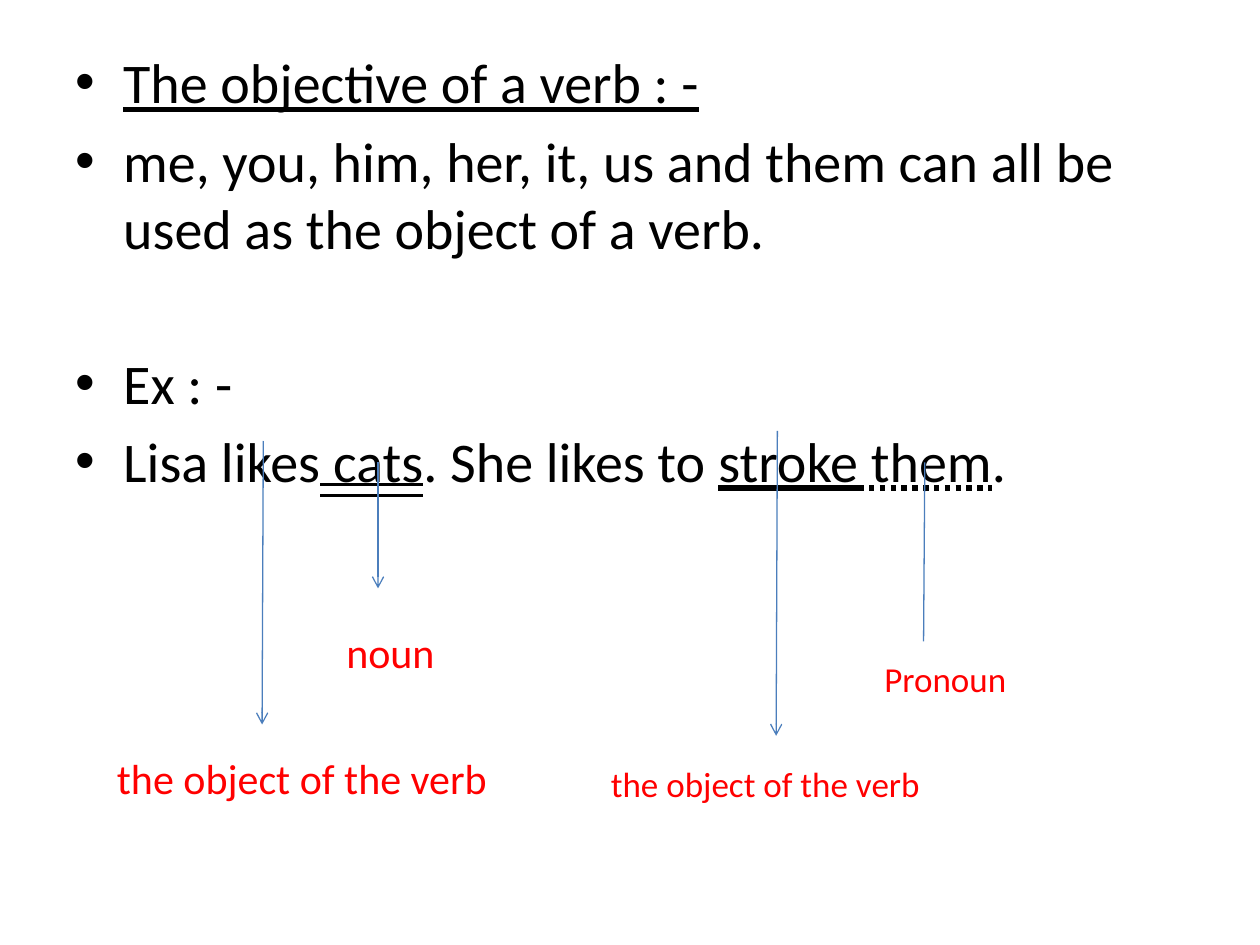
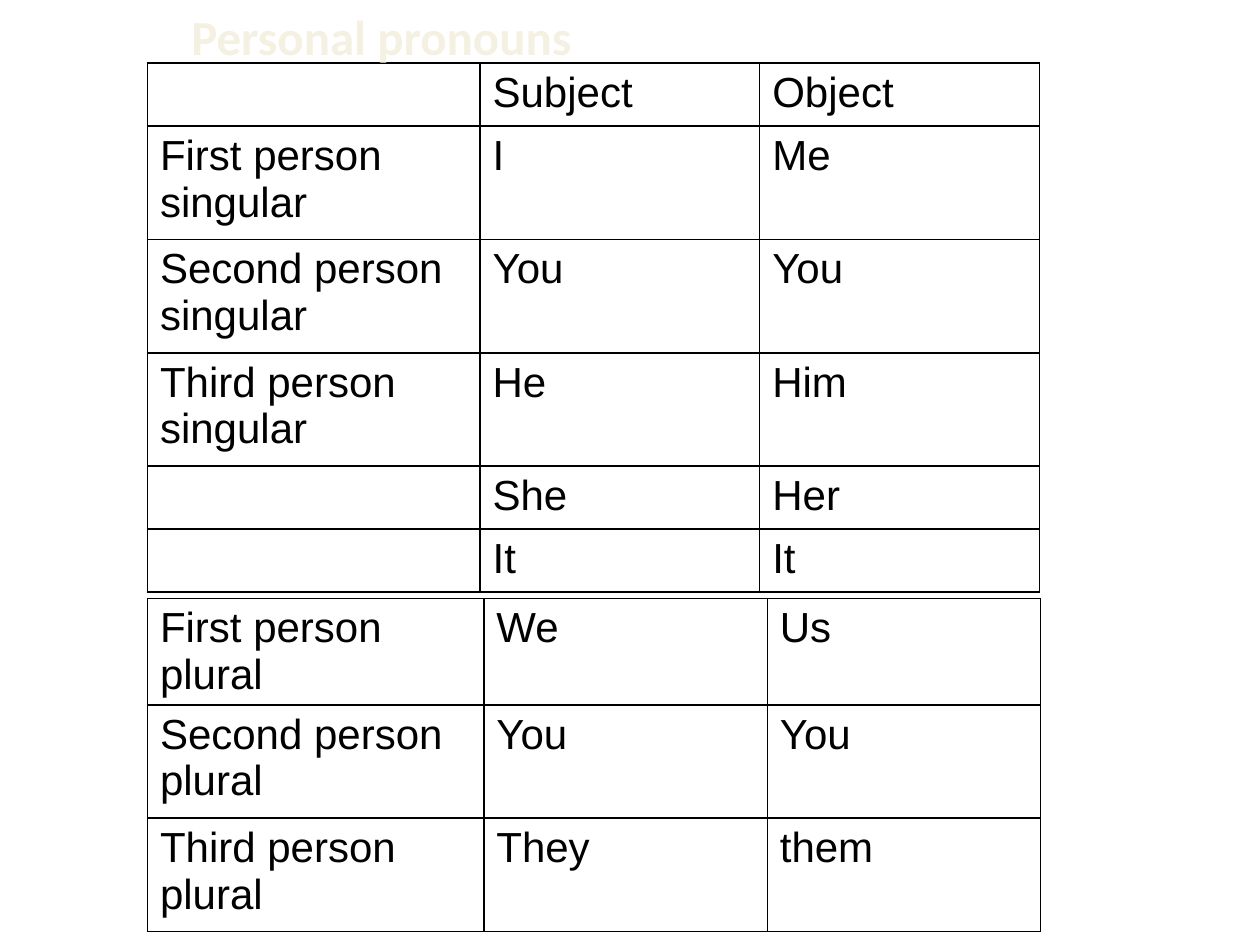
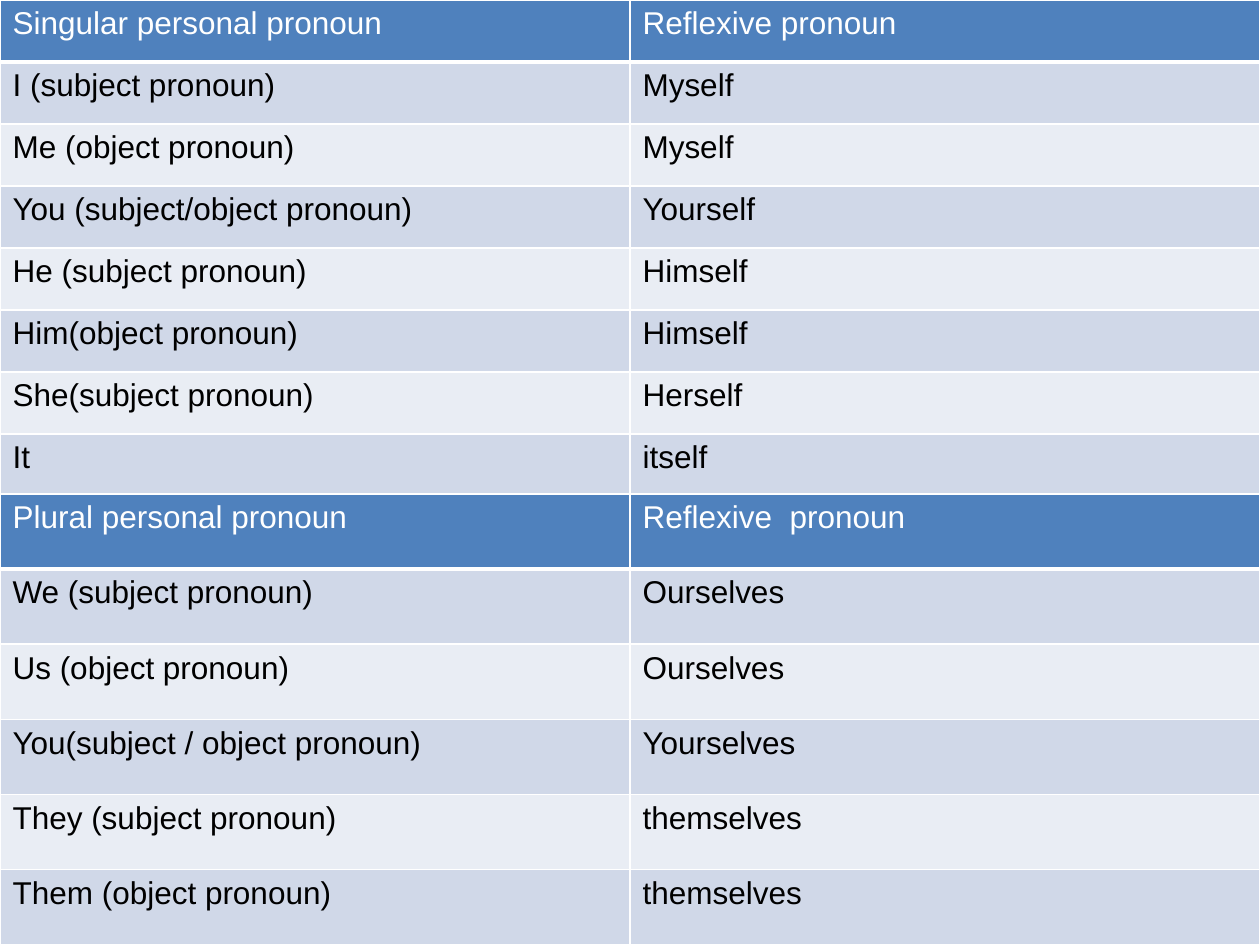
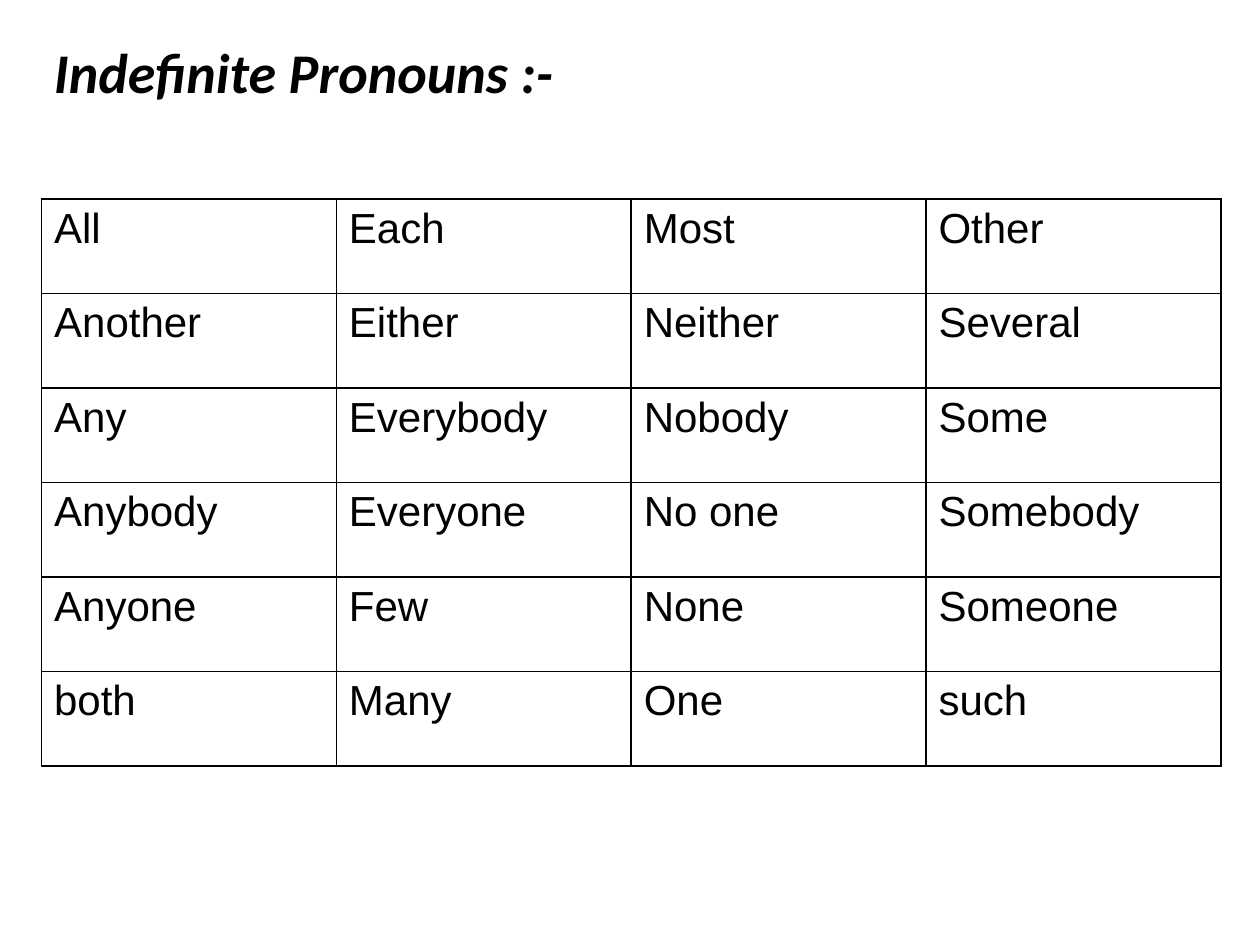
from dataclasses import dataclass

import pptx
import pptx.dml.color
import pptx.enum.shapes
import pptx.enum.text
import pptx.oxml
import pptx.oxml.ns
import pptx.util
from pptx.util import Inches, Pt


@dataclass(frozen=True)
class Theme:
    body_font: str = "Calibri"
    table_font: str = "Arial"
    black: str = "000000"
    white: str = "FFFFFF"
    label: str = "FF0000"
    arrow: str = "4B7EBC"
    title: str = "F4F1E3"
    title_outline: str = "054697"
    header: str = "4F81BD"
    bands: tuple = ("D0D8E8", "E9EDF4")
    body_size: int = 32
    title_size: int = 28
    grid_size: int = 24
    label_size: int = 20
    banded_size: int = 18
    arrow_width: float = 0.75
    border_width: int = 1
    header_border: int = 3


THEME = Theme()
UNDERLINE = pptx.enum.text.MSO_UNDERLINE

VERB_BOX = (0.5, 0.33, 9, 4.95)
VERB_BULLETS = [
    (0, [("The objective of a verb : -", UNDERLINE.SINGLE_LINE)]),
    (6.4, [("me, you, him, her, it, us and them can all be used as the object of a verb.", None)]),
    (50, [("Ex : -", None)]),
    (6.4, [
        ("Lisa likes", None),
        (" cats", UNDERLINE.DOUBLE_LINE),
        (". She likes to ", None),
        ("stroke", UNDERLINE.SINGLE_LINE),
        (" them", UNDERLINE.DOTTED_LINE),
        (".", None),
    ]),
]
NOUN = {"text": "noun", "indent": 2.15, "before": 76}
ARROWS = [
    ((3, 3.67), (3, 4.67), True),
    ((2.09, 3.5), (2.08, 5.75), True),
    ((7.34, 3.67), (7.33, 5.09), False),
    ((6.17, 3.42), (6.16, 5.84), True),
]
LABELS = [
    ("the object of the verb", (0.83, 5.92, 3.24, 0.51), THEME.grid_size, False),
    ("Pronoun", (6.92, 5.17, 1.83, 0.44), THEME.label_size, True),
    ("the object of the verb", (4.75, 6, 2.74, 0.44), THEME.label_size, False),
]

PERSONAL_TITLE = ("Personal pronouns", (1.42, 0, 3.5, 0.57))
PERSONAL_SINGULAR = [
    ("", "Subject", "Object"),
    ("First person singular", "I", "Me"),
    ("Second person singular", "You", "You"),
    ("Third person singular", "He", "Him"),
    ("", "She", "Her"),
    ("", "It", "It"),
]
PERSONAL_PLURAL = [
    ("First person plural", "We", "Us"),
    ("Second person plural", "You", "You"),
    ("Third person plural", "They", "them"),
]

REFLEXIVE_SINGULAR = [
    ("Singular personal pronoun", "Reflexive pronoun"),
    ("I (subject pronoun)", "Myself"),
    ("Me (object pronoun)", "Myself"),
    ("You (subject/object pronoun)", "Yourself"),
    ("He (subject pronoun)", "Himself"),
    ("Him(object pronoun)", "Himself"),
    ("She(subject pronoun)", "Herself"),
    ("It", "itself"),
]
REFLEXIVE_PLURAL = [
    ("Plural personal pronoun", "Reflexive  pronoun"),
    ("We (subject pronoun)", "Ourselves"),
    ("Us (object pronoun)", "Ourselves"),
    ("You(subject / object pronoun)", "Yourselves"),
    ("They (subject pronoun)", "themselves"),
    ("Them (object pronoun)", "themselves"),
]

INDEFINITE_TITLE = ("Indefinite Pronouns :-", (0.33, 0.25, 5.42, 0.64))
INDEFINITE = [
    ("All", "Each", "Most", "Other"),
    ("Another", "Either", "Neither", "Several"),
    ("Any", "Everybody", "Nobody", "Some"),
    ("Anybody", "Everyone", "No one", "Somebody"),
    ("Anyone", "Few", "None", "Someone"),
    ("both", "Many", "One", "such"),
]


def rgb(color):
    return pptx.dml.color.RGBColor.from_string(color)


def element(xml):
    return pptx.oxml.parse_xml(xml.replace(">", f" {pptx.oxml.ns.nsdecls('a')}>", 1))


def line_xml(tag, color, width):
    return element(
        f'<a:{tag} w="{Pt(width)}"><a:solidFill><a:srgbClr val="{color}"/></a:solidFill></a:{tag}>'
    )


def add_run(paragraph, text, size, color=THEME.black, font=THEME.body_font,
            bold=False, italic=False, underline=None):
    run = paragraph.add_run()
    run.text = text
    run.font.name = font
    run.font.size = Pt(size)
    run.font.bold = bold
    run.font.italic = italic
    run.font.color.rgb = rgb(color)
    if underline:
        run.font.underline = underline
    return run


def add_box(slide, place, wrap=True):
    frame = slide.shapes.add_textbox(*map(Inches, place)).text_frame
    frame.word_wrap = wrap
    return frame


def add_label(slide, text, place, size, wrap=True, **style):
    return add_run(add_box(slide, place, wrap).paragraphs[0], text, size, **style)


def set_indent(paragraph, left, first):
    properties = paragraph._p.get_or_add_pPr()
    properties.set("marL", str(Inches(left)))
    properties.set("indent", str(Inches(first)))
    return properties


def add_arrow(slide, start, end, pointed):
    connector = slide.shapes.add_connector(
        pptx.enum.shapes.MSO_CONNECTOR.STRAIGHT, *map(Inches, start + end)
    )
    connector.line.color.rgb = rgb(THEME.arrow)
    connector.line.width = Pt(THEME.arrow_width)
    if pointed:
        connector.line._get_or_add_ln().append(element('<a:tailEnd type="arrow"></a:tailEnd>'))
    connector._element.spPr.append(element("<a:effectLst></a:effectLst>"))


def add_grid(slide, rows, left, top, widths, heights, banded=False):
    table = slide.shapes.add_table(
        len(rows), len(widths), Inches(left), Inches(top),
        Inches(sum(widths)), Inches(sum(heights)),
    ).table
    table.first_row = banded
    table.horz_banding = banded
    for column, width in zip(table.columns, widths):
        column.width = Inches(width)
    for row, height in zip(table.rows, heights):
        row.height = Inches(height)
    border = THEME.white if banded else THEME.black
    size = THEME.banded_size if banded else THEME.grid_size
    for row_index, values in enumerate(rows):
        header = banded and row_index == 0
        for column_index, value in enumerate(values):
            cell = table.cell(row_index, column_index)
            properties = cell._tc.get_or_add_tcPr()
            for tag in ("lnL", "lnR", "lnT", "lnB"):
                thick = header and tag == "lnB"
                width = THEME.header_border if thick else THEME.border_width
                properties.append(line_xml(tag, border, width))
            if banded:
                cell.fill.solid()
                fill = THEME.header if header else THEME.bands[(row_index - 1) % 2]
                cell.fill.fore_color.rgb = rgb(fill)
            else:
                cell.fill.background()
            if value:
                add_run(cell.text_frame.paragraphs[0], value, size,
                        THEME.white if header else THEME.black, THEME.table_font)


def build_verb_objects(slide):
    frame = add_box(slide, VERB_BOX)
    for index, (before, runs) in enumerate(VERB_BULLETS):
        paragraph = frame.add_paragraph() if index else frame.paragraphs[0]
        properties = set_indent(paragraph, 0.38, -0.38)
        properties.append(element('<a:buFont typeface="Arial"></a:buFont>'))
        properties.append(element('<a:buChar char="•"></a:buChar>'))
        if before:
            paragraph.space_before = Pt(before)
        for text, underline in runs:
            add_run(paragraph, text, THEME.body_size, underline=underline)
    paragraph = frame.add_paragraph()
    set_indent(paragraph, NOUN["indent"], 0)
    paragraph.space_before = Pt(NOUN["before"])
    add_run(paragraph, NOUN["text"], THEME.grid_size, THEME.label)
    for arrow in ARROWS:
        add_arrow(slide, *arrow)
    for text, place, size, wrap in LABELS:
        add_label(slide, text, place, size, wrap, color=THEME.label)


def build_personal(slide):
    add_grid(slide, PERSONAL_SINGULAR, 1.17, 0.5, [2.64, 2.22, 2.22],
             [0.5, 0.9, 0.9, 0.9, 0.5, 0.5])
    add_grid(slide, PERSONAL_PLURAL, 1.17, 4.75, [2.67, 2.25, 2.17], [0.73, 0.9, 0.9])
    text, place = PERSONAL_TITLE
    run = add_label(slide, text, place, THEME.title_size, color=THEME.title, bold=True)
    run.font._element.insert(0, line_xml("ln", THEME.title_outline, THEME.border_width))


def build_reflexive(slide):
    for rows, top, height in ((REFLEXIVE_SINGULAR, 0, 3.94), (REFLEXIVE_PLURAL, 3.92, 3.58)):
        add_grid(slide, rows, 0, top, [5, 5], [height / len(rows)] * len(rows), banded=True)


def build_indefinite(slide):
    text, place = INDEFINITE_TITLE
    add_label(slide, text, place, THEME.body_size, bold=True, italic=True)
    add_grid(slide, INDEFINITE, 0.33, 1.58, [2.34] * 4, [0.75] * len(INDEFINITE))


def main():
    presentation = pptx.Presentation()
    presentation.slide_width = Inches(10)
    presentation.slide_height = Inches(7.5)
    for build in (build_verb_objects, build_personal, build_reflexive, build_indefinite):
        build(presentation.slides.add_slide(presentation.slide_layouts[6]))
    presentation.save("out.pptx")


if __name__ == "__main__":
    main()
